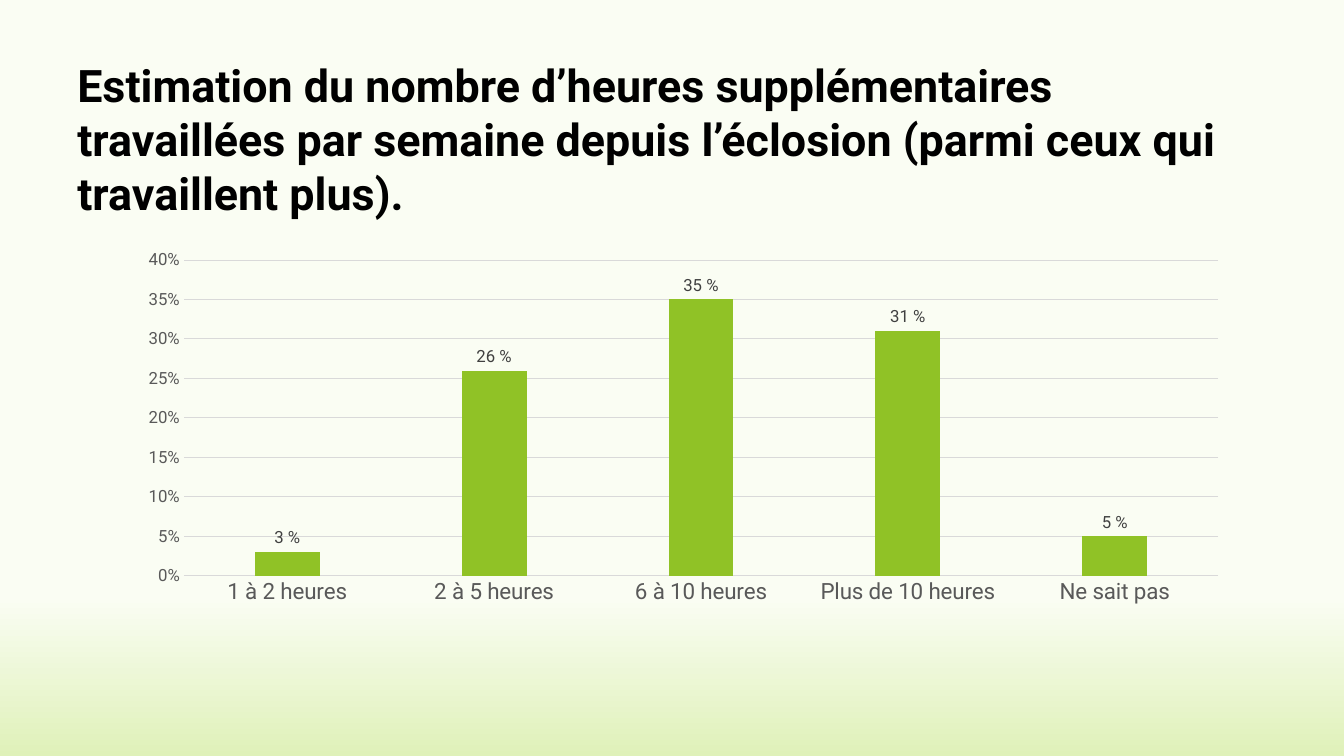
import pptx
import pptx.chart.data
import pptx.dml.color
import pptx.enum.chart
import pptx.enum.text
import pptx.util

FONT = "Roboto"
COLORS = {
    "title": "000000",
    "axis": "595959",
    "label": "404040",
    "grid": "D9D9D9",
    "bar": "90C226",
    "page_top": "FAFDF3",
    "page_bottom": "DFF1B9",
}
TITLE = (
    "Estimation du nombre d’heures supplémentaires travaillées par semaine "
    "depuis l’éclosion (parmi ceux qui travaillent plus)."
)
EXTRA_HOURS = {
    "1 à 2 heures": 0.03,
    "2 à 5 heures": 0.26,
    "6 à 10 heures": 0.35,
    "Plus de 10 heures": 0.31,
    "Ne sait pas": 0.05,
}
SLIDE_SIZE = (13.33, 7.5)
# Left, top, width and height as shares of the slide
TITLE_BOX = (0.05, 0.07, 0.9, 0.125)
CHART_BOX = (0.094, 0.321, 0.829, 0.489)


def color(name):
    return pptx.dml.color.RGBColor.from_string(COLORS[name])


def to_lengths(shares):
    return [pptx.util.Inches(share * SLIDE_SIZE[i % 2]) for i, share in enumerate(shares)]


def style_font(font, size, color_name, bold=False):
    font.name = FONT
    font.size = pptx.util.Pt(size)
    font.bold = bold
    font.color.rgb = color(color_name)


def style_line(line):
    line.color.rgb = color("grid")
    line.width = pptx.util.Pt(0.75)


def paint_background(page):
    fill = page.background.fill
    fill.gradient()
    fill.gradient_angle = 270
    stops = ((0.79, "page_top"), (1, "page_bottom"))
    for stop, (position, name) in zip(fill.gradient_stops, stops):
        stop.position = position
        stop.color.rgb = color(name)


def add_title(page, box):
    title = page.shapes.title
    title.left, title.top, title.width, title.height = to_lengths(box)
    frame = title.text_frame
    frame.word_wrap = True
    frame.auto_size = pptx.enum.text.MSO_AUTO_SIZE.NONE
    frame.vertical_anchor = pptx.enum.text.MSO_ANCHOR.TOP
    para = frame.paragraphs[0]
    para.alignment = pptx.enum.text.PP_ALIGN.LEFT
    span = para.add_run()
    span.text = TITLE
    style_font(span.font, 32, "title", bold=True)


def add_hours_chart(page, box):
    data = pptx.chart.data.CategoryChartData(number_format="0%")
    data.categories = list(EXTRA_HOURS)
    data.add_series("Series 1", list(EXTRA_HOURS.values()))
    chart = page.shapes.add_chart(
        pptx.enum.chart.XL_CHART_TYPE.COLUMN_CLUSTERED, *to_lengths(box), data
    ).chart
    style_font(chart.font, 10, "title")
    chart.has_legend = False
    chart.has_title = False
    style_axes(chart)
    style_bars(chart.plots[0])


def style_axes(chart):
    for axis, size in ((chart.category_axis, 16), (chart.value_axis, 12)):
        axis.major_tick_mark = pptx.enum.chart.XL_TICK_MARK.NONE
        axis.minor_tick_mark = pptx.enum.chart.XL_TICK_MARK.NONE
        style_font(axis.tick_labels.font, size, "axis")
    style_line(chart.category_axis.format.line)
    values = chart.value_axis
    values.format.line.fill.background()
    values.minimum_scale, values.maximum_scale, values.major_unit = 0, 0.4, 0.05
    values.tick_labels.number_format = "0%"
    values.tick_labels.number_format_is_linked = False
    values.has_major_gridlines = True
    style_line(values.major_gridlines.format.line)


def style_bars(plot):
    plot.vary_by_categories = False
    plot.gap_width = 219
    plot.overlap = -27
    series = plot.series[0]
    series.format.fill.solid()
    series.format.fill.fore_color.rgb = color("bar")
    labels = series.data_labels
    labels.show_value = True
    labels.position = pptx.enum.chart.XL_LABEL_POSITION.OUTSIDE_END
    labels.number_format = r"0\ %"
    labels.number_format_is_linked = False
    style_font(labels.font, 12, "label")


def main():
    deck = pptx.Presentation()
    deck.slide_width, deck.slide_height = map(pptx.util.Inches, SLIDE_SIZE)
    title_only = deck.slide_layouts[5]
    page = deck.slides.add_slide(title_only)
    paint_background(page)
    add_title(page, TITLE_BOX)
    add_hours_chart(page, CHART_BOX)
    deck.save("out.pptx")


if __name__ == "__main__":
    main()
